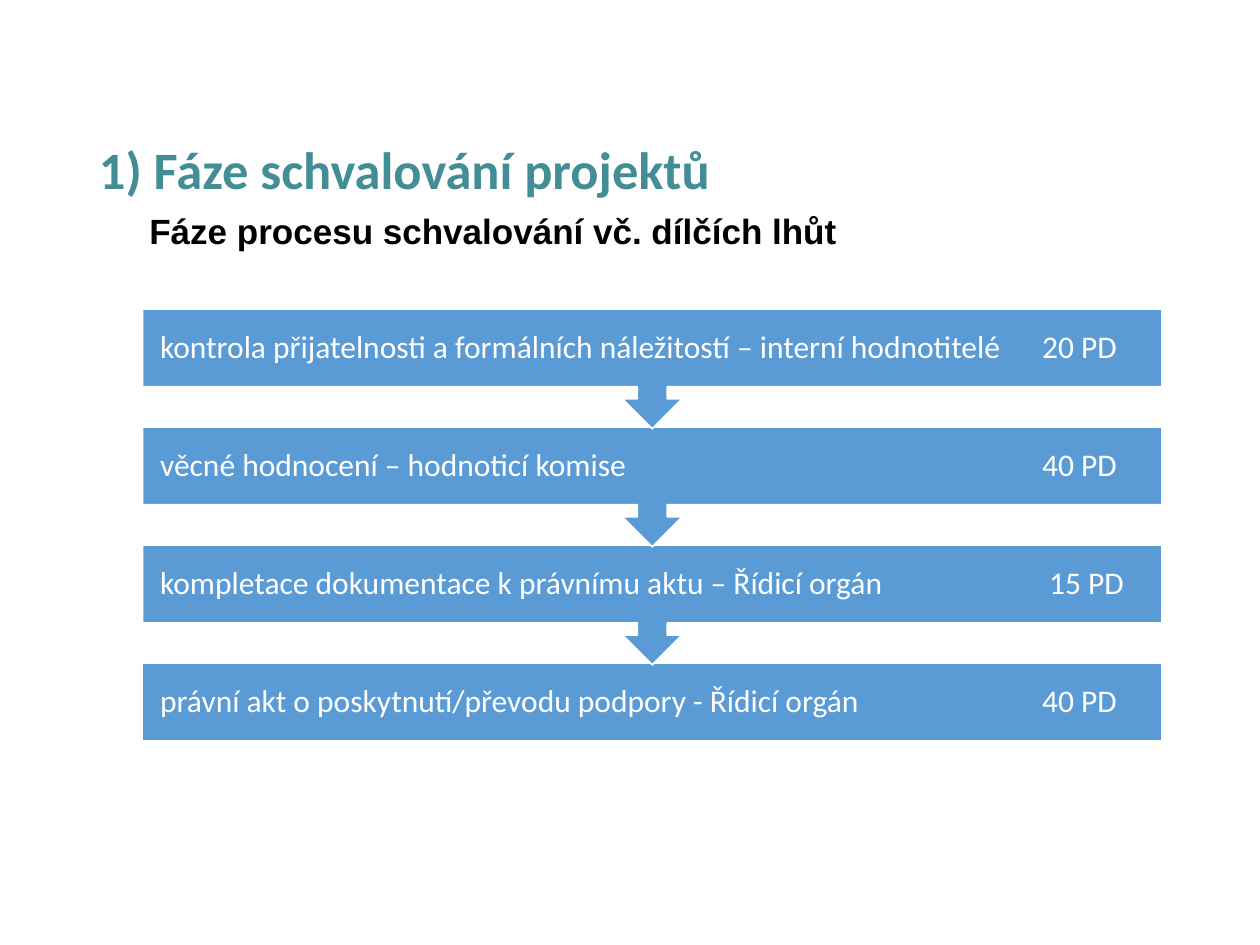
from pptx import Presentation
from pptx.dml.color import RGBColor
from pptx.enum.shapes import MSO_SHAPE as Kind
from pptx.enum.text import MSO_ANCHOR as Anchor, PP_ALIGN as Align
from pptx.util import Pt
from lxml.etree import SubElement as sub
from pptx.oxml.ns import qn

STEPS = [
    ("kontrola přijatelnosti a formálních náležitostí – interní hodnotitelé", "20 PD"),
    ("věcné hodnocení – hodnoticí komise", "40 PD"),
    ("kompletace dokumentace k právnímu aktu – Řídicí orgán", " 15 PD"),
    ("právní akt o poskytnutí/převodu podpory - Řídicí orgán", "40 PD"),
]
TITLE = {"name": "Calibri", "size": Pt(30), "bold": True}
LEAD = {"name": "Arial", "size": Pt(20), "bold": True}
STEP = {"name": "Calibri", "size": Pt(18), "bold": False}


def color(code):
    return RGBColor.from_string(code)


def write(frame, text, style, ink, anchor, align=Align.LEFT, tab=None, indent=0):
    frame.word_wrap = True
    frame.vertical_anchor = anchor
    par = frame.paragraphs[0]
    par.text = text
    par.alignment = align
    props = par._p.get_or_add_pPr()
    if indent:
        props.set("marL", str(Pt(indent)))
    if tab:
        tabs = sub(props, qn("a:tabLst"))
        sub(tabs, qn("a:tab"), pos=str(Pt(tab)), algn="l")
    font = par.runs[0].font
    for key, value in style.items():
        setattr(font, key, value)
    font.color.rgb = color(ink)
    return par


def head(slide, left, top, width):
    # Title and the line under it
    box = slide.shapes.add_textbox(Pt(left), Pt(top), Pt(width), Pt(70.5))
    par = write(box.text_frame, "1) Fáze schvalování projektů", TITLE, "428D96", Anchor.MIDDLE)
    par.line_spacing = 0.9
    box = slide.shapes.add_textbox(Pt(left), Pt(top + 52.5), Pt(width), Pt(36))
    write(box.text_frame, "Fáze procesu schvalování vč. dílčích lhůt", LEAD, "000000",
          Anchor.TOP, Align.JUSTIFY, indent=28.8)


def flow(slide, left, top, width, height):
    # Steps from the last to the first, so each arrow tip lies over the next bar
    bar = 44.6
    last = len(STEPS) - 1
    pitch = (height - bar) / last
    for i, (label, term) in reversed(list(enumerate(STEPS))):
        kind, tall = (Kind.RECTANGLE, bar) if i == last else (Kind.DOWN_ARROW_CALLOUT, 68.5)
        shape = slide.shapes.add_shape(kind, Pt(left), Pt(top + i * pitch), Pt(width), Pt(tall))
        shape.shadow.inherit = False
        shape.fill.solid()
        shape.fill.fore_color.rgb = color("5B9BD5")
        shape.line.color.rgb = color("FFFFFF")
        shape.line.width = Pt(1)
        frame = shape.text_frame
        for side in ("left", "top", "right", "bottom"):
            setattr(frame, f"margin_{side}", Pt(10))
        par = write(frame, f"{label}\t{term}", STEP, "FFFFFF", Anchor.MIDDLE, tab=504)
        par.line_spacing = 0.9


def main():
    deck = Presentation()
    deck.slide_width, deck.slide_height = Pt(720), Pt(540)
    slide = deck.slides.add_slide(deck.slide_layouts[6])
    head(slide, 49.5, 63.5, 621)
    flow(slide, 81.5, 176.5, 582.5, 247)
    deck.save("out.pptx")


if __name__ == "__main__":
    main()
